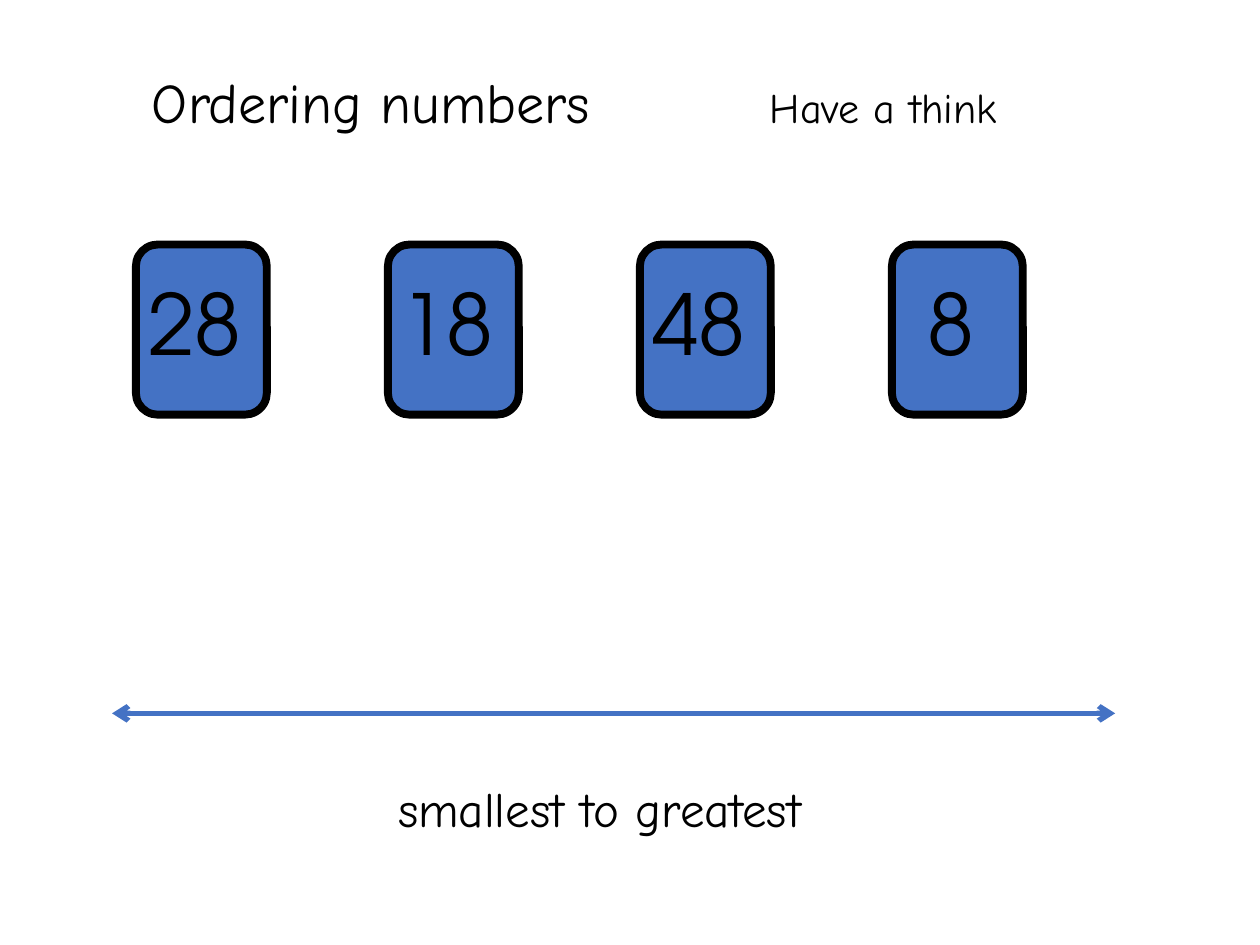
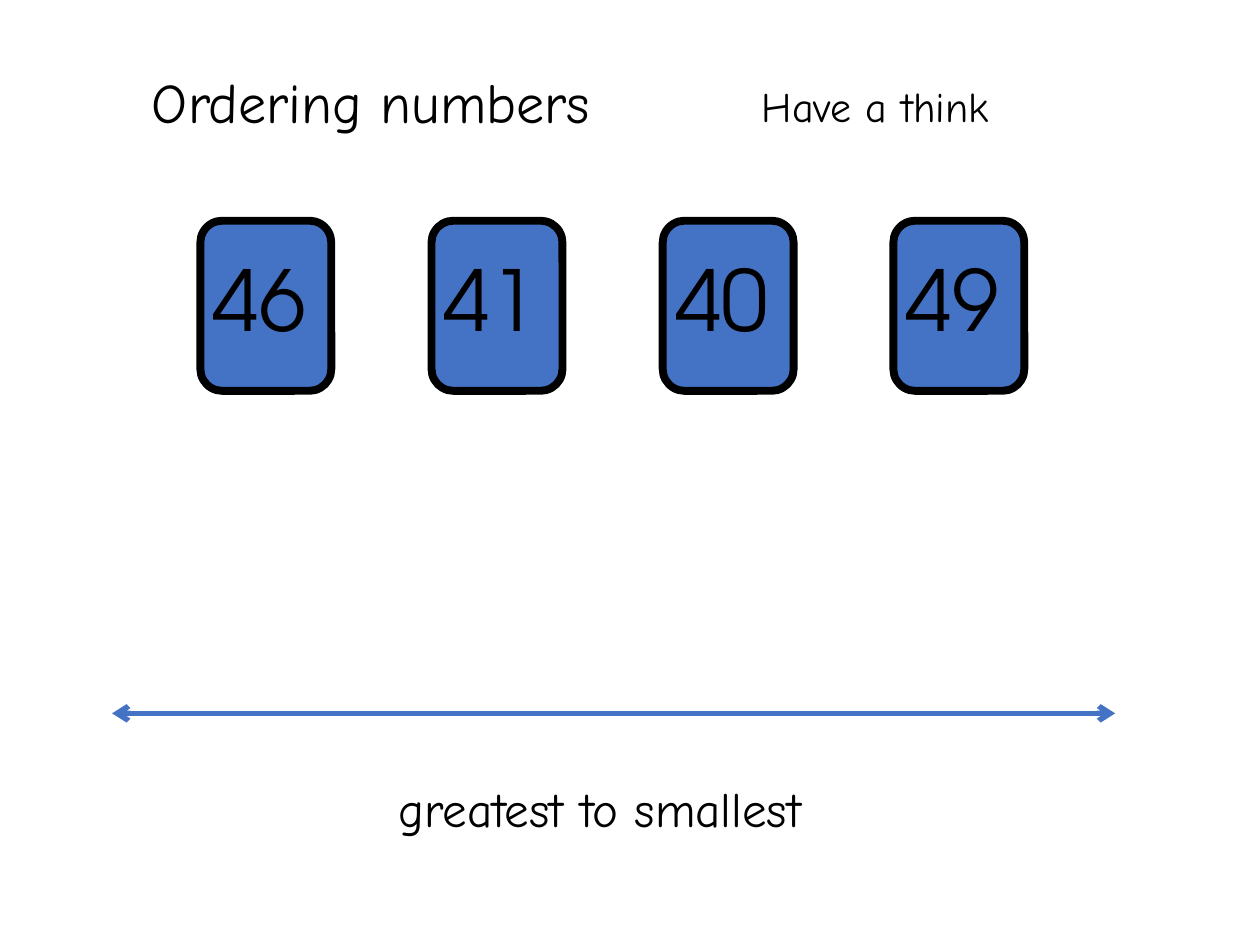
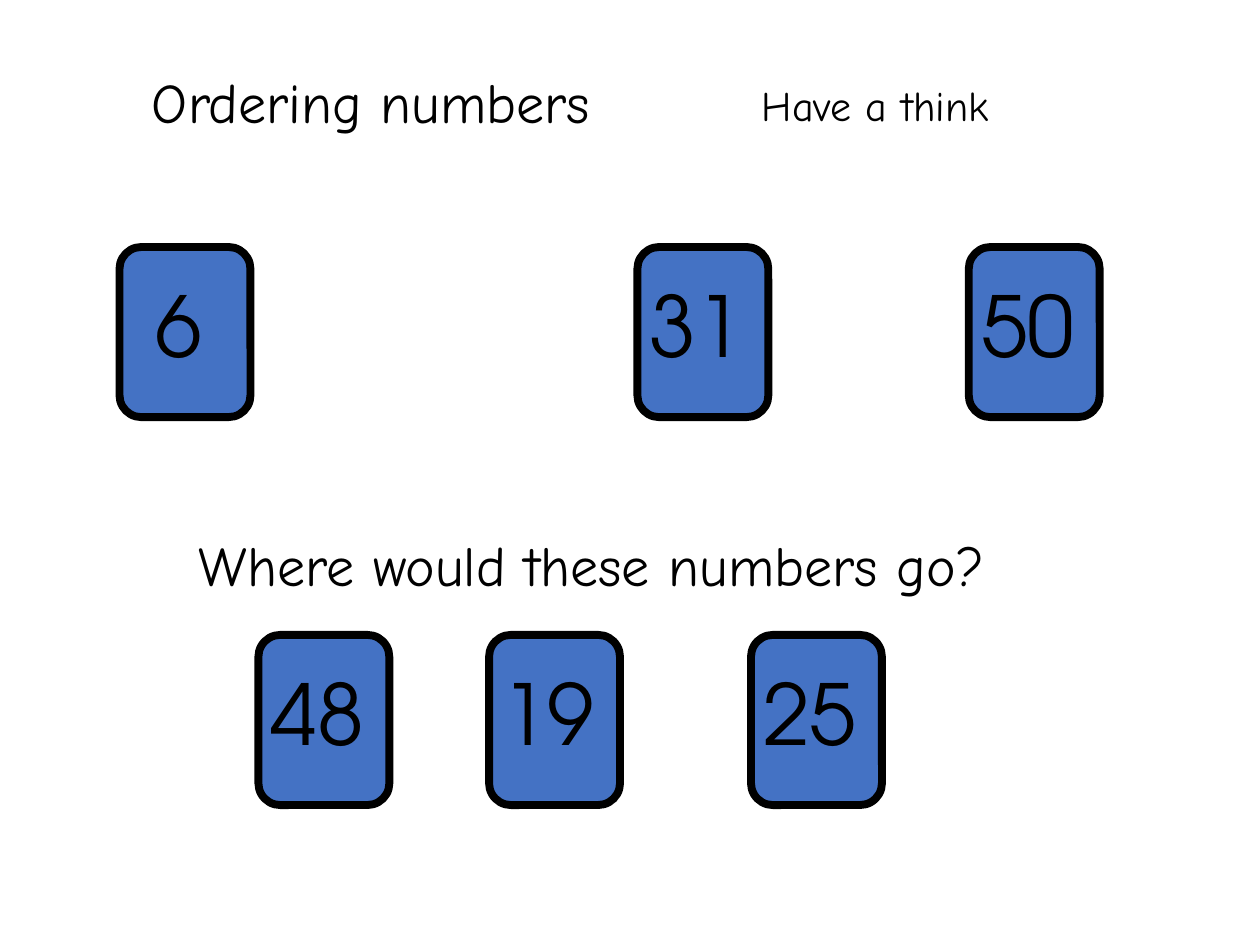
from dataclasses import dataclass

from lxml.etree import SubElement
from pptx import Presentation
from pptx.dml.color import RGBColor
from pptx.enum.shapes import MSO_CONNECTOR, MSO_SHAPE
from pptx.enum.text import MSO_ANCHOR, PP_ALIGN
from pptx.oxml.ns import qn
from pptx.util import Cm, Pt


@dataclass(frozen=True)
class Theme:
    blue: RGBColor = RGBColor(0x44, 0x72, 0xC4)
    black: RGBColor = RGBColor(0, 0, 0)
    words: str = "Comic Neue"
    digits: str = "TeX Gyre Adventor"
    head: int = 32
    label: int = 28
    prompt: int = 24
    number: int = 48
    edge: float = 4.5
    line: int = 3


THEME = Theme()
TITLE = "Ordering numbers"
PROMPT = "Have a think"

# Lengths are in centimetres. A row holds its top and a list of (left, number).
SLIDES = [
    {
        "prompt": (15.27, 1.52),
        "rows": [(4.93, [(2.74, 28), (7.82, 18), (12.9, 48), (17.98, 8)])],
        "order": "smallest to greatest",
    },
    {
        "prompt": (15.11, 1.5),
        "rows": [(4.45, [(4.04, 46), (8.7, 41), (13.36, 40), (18.01, 49)])],
        "order": "greatest to smallest",
    },
    {
        "prompt": (15.11, 1.47),
        "rows": [
            (4.98, [(2.41, 6), (12.85, 31), (19.53, 50)]),
            (12.8, [(5.21, 48), (9.86, 19), (15.14, 25)]),
        ],
        "question": "Where would these numbers go?",
    },
]

TITLE_BOX = (-1.09, 1.24, 17.15, 1.63)
ORDER_BOX = (3.38, 15.57, 17.42, 1.45)
ASK_BOX = (2.9, 10.57, 18.06, 1.63)
PROMPT_SIZE = (6.48, 1.27)
CARD_SIZE = (2.64, 3.43)
DIGIT_DROP, DIGIT_HIGH = 0.41, 2.31
INSET, ONE_DIGIT = 0.25, 0.72
ARROW = (2.26, 14.38, 22.48, 14.38)


def cms(values):
    return [Cm(value) for value in values]


def write(shape, text, size, font=THEME.words, align=PP_ALIGN.CENTER):
    frame = shape.text_frame
    frame.text = text
    frame.word_wrap = True
    frame.vertical_anchor = MSO_ANCHOR.TOP
    para = frame.paragraphs[0]
    para.alignment = align
    style = para.runs[0].font
    style.name, style.size = font, Pt(size)
    style.color.rgb = THEME.black


def add_text(shapes, box, *args, **kwargs):
    shape = shapes.add_textbox(*cms(box))
    write(shape, *args, **kwargs)
    return shape


def add_title(slide):
    title = slide.shapes.title
    title.left, title.top, title.width, title.height = cms(TITLE_BOX)
    write(title, TITLE, THEME.head)


def add_card(slide, left, top, number):
    shapes = slide.shapes.add_group_shape().shapes
    card = shapes.add_shape(
        MSO_SHAPE.ROUNDED_RECTANGLE, *cms((left, top, *CARD_SIZE))
    )
    card.shadow.inherit = False
    card.fill.solid()
    card.fill.fore_color.rgb = THEME.blue
    card.line.color.rgb = THEME.black
    card.line.width = Pt(THEME.edge)
    box = (left, top + DIGIT_DROP, CARD_SIZE[0], DIGIT_HIGH)
    text = add_text(shapes, box, str(number), THEME.number, THEME.digits, PP_ALIGN.LEFT)
    text.text_frame.margin_left = Cm(ONE_DIGIT if number < 10 else INSET)


def add_arrow(slide):
    arrow = slide.shapes.add_connector(MSO_CONNECTOR.STRAIGHT, *cms(ARROW))
    arrow.line.color.rgb = THEME.blue
    arrow.line.width = Pt(THEME.line)
    line = arrow.line._get_or_add_ln()
    for end in ("a:headEnd", "a:tailEnd"):
        SubElement(line, qn(end), type="arrow")
    SubElement(arrow._element.spPr, qn("a:effectLst"))


def add_slide(deck, page):
    slide = deck.slides.add_slide(deck.slide_layouts.get_by_name("Title Only"))
    add_title(slide)
    add_text(
        slide.shapes, page["prompt"] + PROMPT_SIZE, PROMPT, THEME.prompt,
        align=PP_ALIGN.LEFT,
    )
    for top, cards in page["rows"]:
        for left, number in cards:
            add_card(slide, left, top, number)
    if "order" in page:
        add_arrow(slide)
        add_text(slide.shapes, ORDER_BOX, page["order"], THEME.label)
    if "question" in page:
        add_text(slide.shapes, ASK_BOX, page["question"], THEME.head)


def main():
    deck = Presentation()
    deck.slide_width, deck.slide_height = Cm(25.4), Cm(19.05)
    for page in SLIDES:
        add_slide(deck, page)
    deck.save("out.pptx")


if __name__ == "__main__":
    main()
